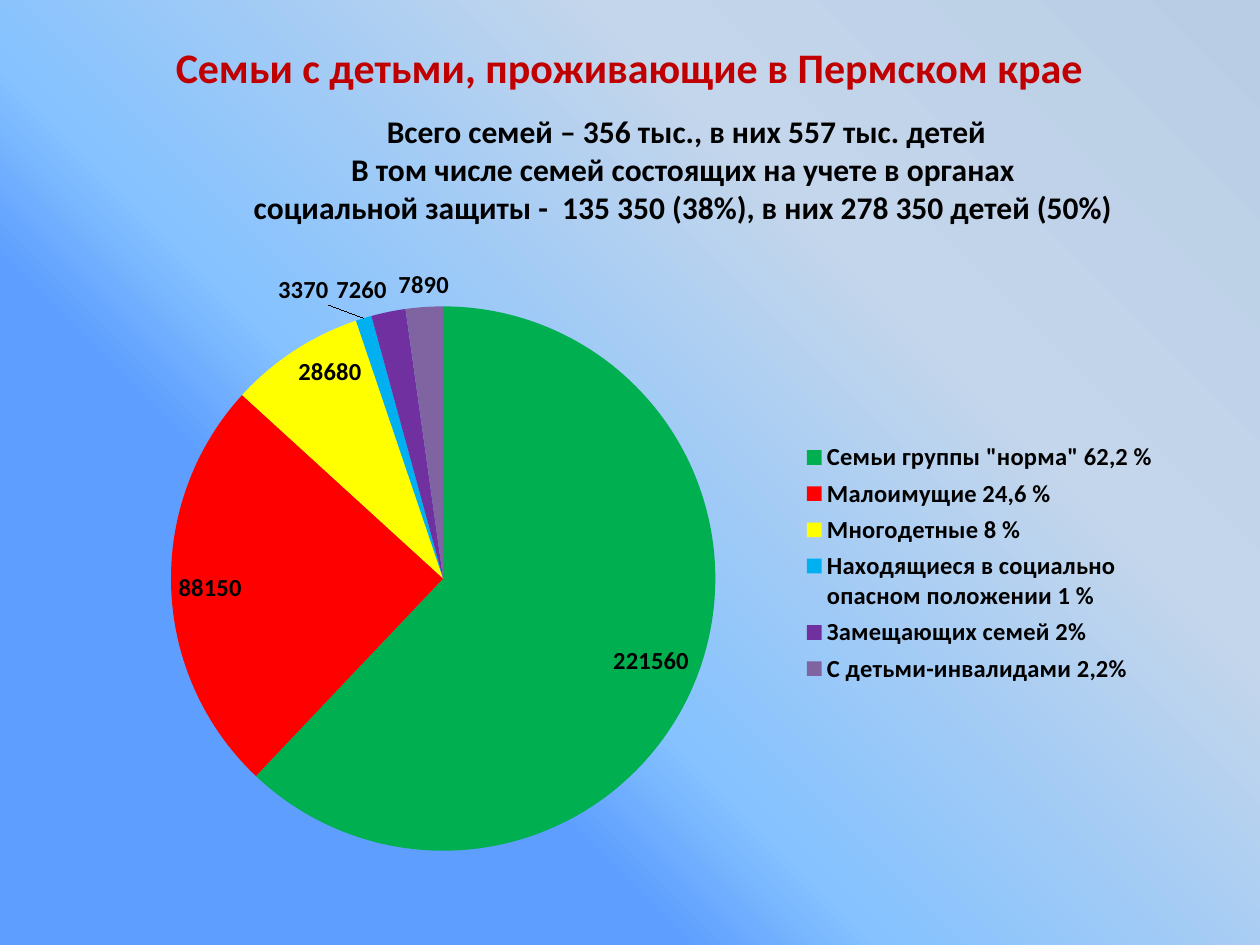
from lxml import etree
from pptx import Presentation
from pptx.chart import data as chart_data
from pptx.dml.color import RGBColor
from pptx.enum import chart as chart_enum, text
from pptx.oxml import ns
from pptx.util import Inches, Pt

FONT = "Calibri"
COLORS = {"title": "C00000", "text": "000000"}
BACKGROUND = [(31, "5E9EFF"), (40, "85C2FF"), (70, "C4D6EB"), (100, "B9CDE5")]
TITLE = "Семьи с детьми, проживающие в Пермском крае"
SUMMARY = [
    "Всего семей – 356 тыс., в них 557 тыс. детей",
    "В том числе семей состоящих на учете в органах ",
    "социальной защиты -  135 350 (38%), в них 278 350 детей (50%) ",
]
FAMILIES = [
    ('Семьи группы "норма" 62,2 %', 221560, "00B050"),
    ("Малоимущие 24,6 %", 88150, "FF0000"),
    ("Многодетные 8 %", 28680, "FFFF00"),
    ("Находящиеся в социально опасном положении 1 %", 3370, "00B0F0"),
    ("Замещающих семей 2%", 7260, "7030A0"),
    ("С детьми-инвалидами 2,2%", 7890, "8064A2"),
]
SMALL_VALUE = 10000
CROWDED_VALUE = 3370


def style_font(font, size, color):
    """Apply the bold slide font in the given size and colour."""
    font.name = FONT
    font.size = Pt(size)
    font.bold = True
    font.color.rgb = RGBColor.from_string(color)


def add_element(parent, tag, **attributes):
    """Append a namespaced child element with the given attributes."""
    return etree.SubElement(parent, ns.qn(tag), attributes)


def set_layout(owner, index, **values):
    """Insert a manual chart layout at an index of the owner element."""
    for old in owner.findall(ns.qn("c:layout")):
        owner.remove(old)
    layout = etree.Element(ns.qn("c:layout"))
    manual = add_element(layout, "c:manualLayout")
    for name, value in values.items():
        add_element(manual, f"c:{name}", val=str(value))
    owner.insert(index, layout)


def paint_background(page):
    """Fill the page with a diagonal gradient."""
    fill = page.background.fill
    fill.gradient()
    fill.gradient_angle = 45
    stops = next(page.element.iter(ns.qn("a:gsLst")))
    for stop in list(stops):
        stops.remove(stop)
    for percent, color in BACKGROUND:
        stop = add_element(stops, "a:gs", pos=str(percent * 1000))
        add_element(stop, "a:srgbClr", val=color)


def add_text(page, box, lines, size, color, wrap):
    """Place centred bold lines in a box."""
    frame = page.shapes.add_textbox(*map(Inches, box)).text_frame
    frame.word_wrap = wrap
    frame.auto_size = text.MSO_AUTO_SIZE.SHAPE_TO_FIT_TEXT
    for number, line in enumerate(lines):
        para = frame.add_paragraph() if number else frame.paragraphs[0]
        para.alignment = text.PP_ALIGN.CENTER
        span = para.add_run()
        span.text = line
        style_font(span.font, size, color)


def style_slices(series):
    """Colour the slices and place their value labels."""
    places = chart_enum.XL_LABEL_POSITION
    labels = series.data_labels
    labels.show_value = True
    labels.position = places.INSIDE_END
    style_font(labels.font, 14, COLORS["text"])
    for number, (_, value, color) in enumerate(FAMILIES):
        point = series.points[number]
        point.format.fill.solid()
        point.format.fill.fore_color.rgb = RGBColor.from_string(color)
        if value < SMALL_VALUE:
            label = point.data_label
            style_font(label.font, 14, COLORS["text"])
            label.position = places.OUTSIDE_END
        if value == CROWDED_VALUE:
            element = next(item for item in series._element.iter(ns.qn("c:dLbl"))
                           if item.find(ns.qn("c:idx")).get("val") == str(number))
            set_layout(element, 1, x=-0.03, y=-0.01)


def add_pie(page, box):
    """Place the pie of family groups with its legend on the right."""
    content = chart_data.CategoryChartData()
    content.categories = [name for name, _, _ in FAMILIES]
    content.add_series("Series 1", [value for _, value, _ in FAMILIES])
    chart = page.shapes.add_chart(
        chart_enum.XL_CHART_TYPE.PIE, *map(Inches, box), content).chart
    chart.has_title = False
    chart.font.name = FONT
    chart.font.size = Pt(10)
    chart.plots[0].vary_by_categories = True
    style_slices(chart.plots[0].series[0])
    chart.has_legend = True
    legend = chart.legend
    legend.position = chart_enum.XL_LEGEND_POSITION.RIGHT
    legend.include_in_layout = False
    style_font(legend.font, 14, COLORS["text"])
    set_layout(legend._element, 1, xMode="edge", yMode="edge",
               x=0.66, y=0.3, w=0.32, h=0.41)
    plot_area = next(chart.element.iter(ns.qn("c:plotArea"))) if hasattr(
        chart, "element") else next(chart._chartSpace.iter(ns.qn("c:plotArea")))
    set_layout(plot_area, 0, layoutTarget="inner", xMode="edge", yMode="edge",
               x=0.08, y=0.09, w=0.5, h=0.88)


def main():
    """Build and save the deck."""
    deck = Presentation()
    deck.slide_width, deck.slide_height = Inches(10), Inches(7.5)
    page = deck.slides.add_slide(deck.slide_layouts[6])
    paint_background(page)
    add_text(page, (1.26, 0.28, 7.47, 0.5), [TITLE], 24, COLORS["title"], False)
    add_text(page, (0.2, 0.84, 10.5, 1.01), SUMMARY, 18, COLORS["text"], True)
    add_pie(page, (0.65, 1.99, 8.69, 4.91))
    deck.save("out.pptx")


if __name__ == "__main__":
    main()
